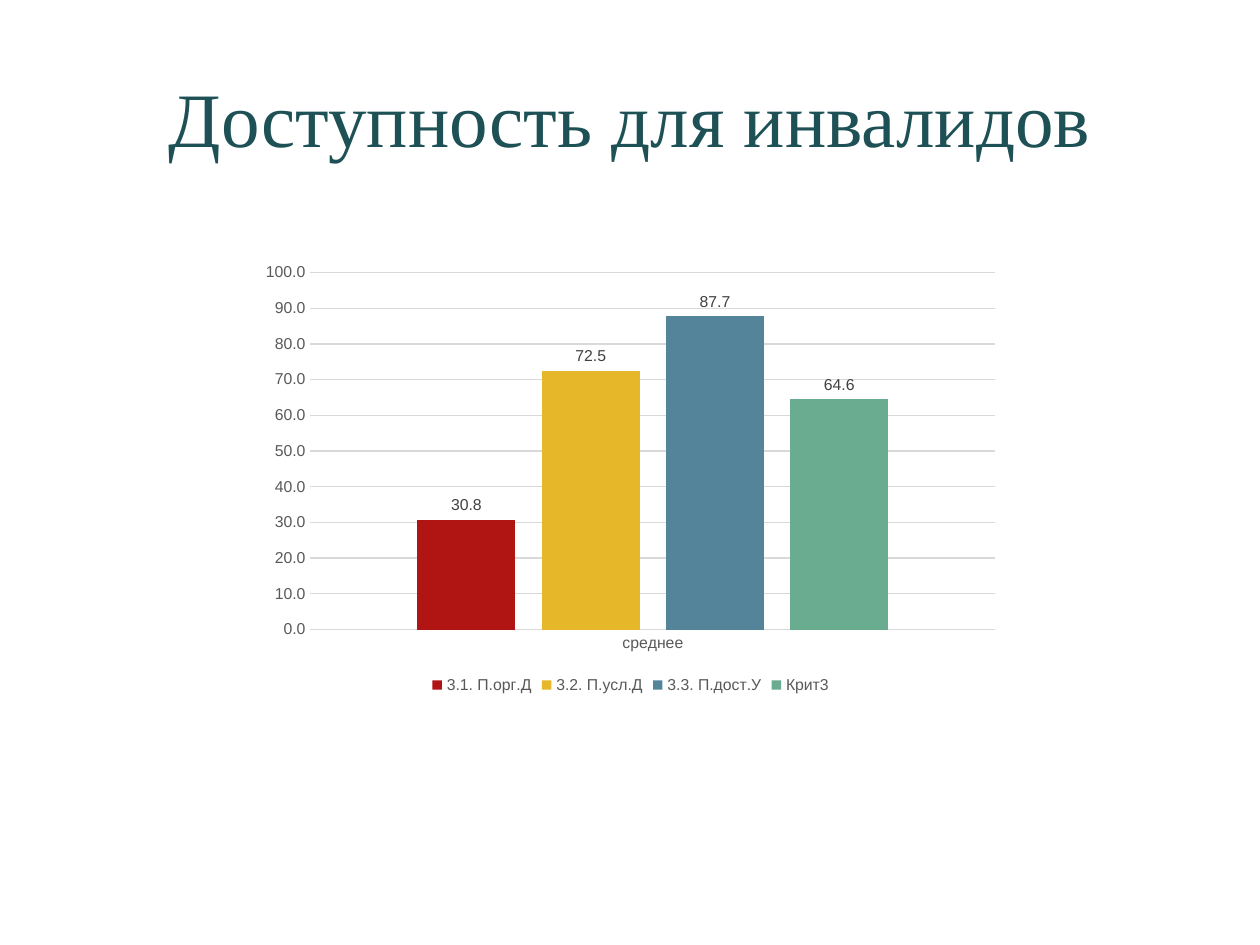
import pptx
import pptx.chart.data
import pptx.dml.color
import pptx.enum.chart
import pptx.enum.text
import pptx.util

Inches = pptx.util.Inches
Pt = pptx.util.Pt
enums = pptx.enum.chart

COLORS = {
    "title": "1E5155",
    "axis": "595959",
    "label": "404040",
    "grid": "D9D9D9",
    "base": "000000",
}
SCORES = [
    ("3.1. П.орг.Д", 30.8, "B01513"),
    ("3.2. П.усл.Д", 72.5, "E6B729"),
    ("3.3. П.дост.У", 87.7, "54849A"),
    ("Крит3", 64.6, "6AAC90"),
]


def rgb(code):
    return pptx.dml.color.RGBColor.from_string(code)


def set_font(font, name, size, color):
    font.name = name
    font.size = Pt(size)
    font.color.rgb = rgb(COLORS[color])


def set_line(line):
    line.color.rgb = rgb(COLORS["grid"])
    line.width = Pt(0.75)


def add_title(slide, left, top, width, height):
    box = slide.shapes.add_textbox(left, top, width, height)
    frame = box.text_frame
    frame.word_wrap = True
    frame.vertical_anchor = pptx.enum.text.MSO_ANCHOR.MIDDLE
    frame.text = "Доступность для инвалидов"
    line = frame.paragraphs[0]
    line.alignment = pptx.enum.text.PP_ALIGN.CENTER
    set_font(line.runs[0].font, "Times New Roman", 44, "title")


def style_axes(chart):
    for axis in (chart.category_axis, chart.value_axis):
        axis.major_tick_mark = enums.XL_TICK_MARK.NONE
        axis.minor_tick_mark = enums.XL_TICK_MARK.NONE
        set_font(axis.tick_labels.font, "Arial", 9, "axis")
    set_line(chart.category_axis.format.line)
    value = chart.value_axis
    value.minimum_scale = 0
    value.maximum_scale = 100
    value.major_unit = 10
    value.format.line.fill.background()
    value.tick_labels.number_format = "0.0"
    value.tick_labels.number_format_is_linked = False
    set_line(value.major_gridlines.format.line)


def style_bars(plot):
    plot.gap_width = 219
    plot.overlap = -27
    plot.vary_by_categories = False
    for bars, (name, score, color) in zip(plot.series, SCORES):
        bars.format.fill.solid()
        bars.format.fill.fore_color.rgb = rgb(color)
        labels = bars.data_labels
        labels.show_value = True
        labels.position = enums.XL_LABEL_POSITION.OUTSIDE_END
        labels.number_format = "0.0"
        labels.number_format_is_linked = False
        set_font(labels.font, "Arial", 9, "label")


def add_scores(slide, left, top, width, height):
    data = pptx.chart.data.CategoryChartData(number_format="0.0")
    data.categories = ["среднее"]
    for name, score, color in SCORES:
        data.add_series(name, [score])
    chart = slide.shapes.add_chart(
        enums.XL_CHART_TYPE.COLUMN_CLUSTERED, left, top, width, height, data
    ).chart
    chart.has_title = False
    set_font(chart.font, "Arial", 10, "base")
    style_axes(chart)
    style_bars(chart.plots[0])
    chart.has_legend = True
    chart.legend.position = enums.XL_LEGEND_POSITION.BOTTOM
    chart.legend.include_in_layout = False
    set_font(chart.legend.font, "Arial", 9, "axis")


def main():
    deck = pptx.Presentation()
    deck.slide_width = Inches(10)
    deck.slide_height = Inches(7.5)
    slide = deck.slides.add_slide(deck.slide_layouts[6])
    add_title(slide, Inches(0.5), Inches(0.3), Inches(9), Inches(1.25))
    add_scores(slide, Inches(1.99), Inches(2.02), Inches(6.03), Inches(3.53))
    deck.save("out.pptx")


if __name__ == "__main__":
    main()
